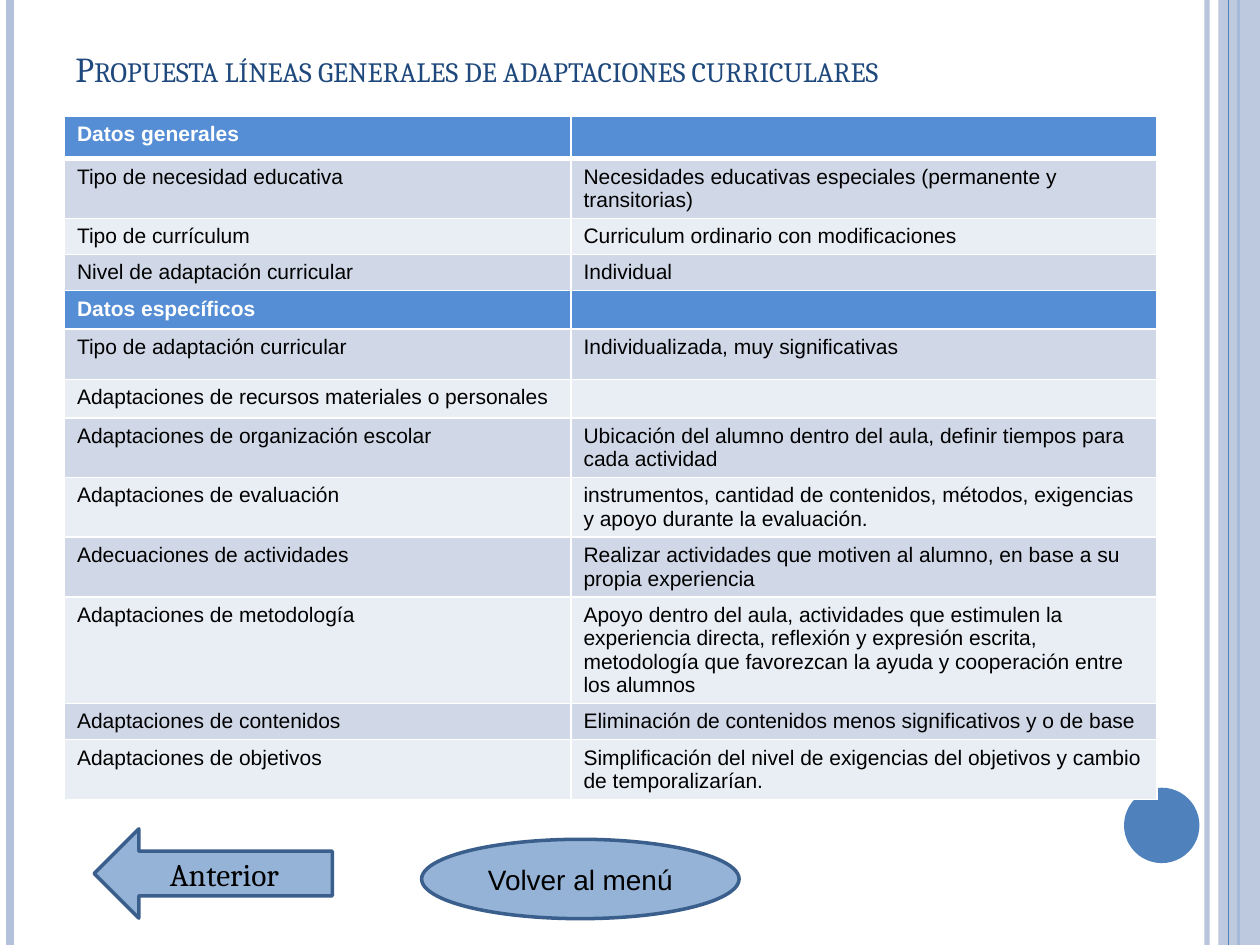
"""Build the slide with the general lines for curricular adaptations."""
from lxml import etree
from pptx import Presentation
from pptx import util as u
from pptx.dml.color import RGBColor
from pptx.enum import shapes, text
from pptx.oxml.ns import qn

WHITE = RGBColor(0xFF, 0xFF, 0xFF)
BLACK = RGBColor(0x00, 0x00, 0x00)
NAVY = RGBColor(0x1F, 0x49, 0x7D)
BLUE = RGBColor(0x4F, 0x81, 0xBD)
PALE = RGBColor(0xB3, 0xC1, 0xDB)
BUTTON = RGBColor(0x95, 0xB3, 0xD7)
EDGE = RGBColor(0x3A, 0x5F, 0x8C)
HEADER = RGBColor(0x55, 0x8E, 0xD5)
BANDS = (RGBColor(0xD0, 0xD8, 0xE8), RGBColor(0xE9, 0xED, 0xF4))

COLUMNS = (10.21, 11.81)
ROWS = (
    (0.86, "Datos generales", ""),
    (0.97, "Tipo de necesidad educativa",
     "Necesidades educativas especiales (permanente y transitorias)"),
    (0.69, "Tipo de currículum", "Curriculum ordinario con modificaciones"),
    (0.71, "Nivel de adaptación curricular", "Individual"),
    (0.53, "Datos específicos", ""),
    (1.02, "Tipo de adaptación curricular", "Individualizada, muy significativas"),
    (0.76, "Adaptaciones de recursos materiales o personales", ""),
    (1.17, "Adaptaciones de organización escolar",
     "Ubicación del alumno dentro del aula, definir tiempos para cada actividad"),
    (1.17, "Adaptaciones de evaluación",
     "instrumentos, cantidad de contenidos, métodos, exigencias y apoyo durante la evaluación."),
    (1.17, "Adecuaciones de actividades",
     "Realizar actividades que motiven al alumno, en base a su propia experiencia"),
    (2.01, "Adaptaciones de metodología",
     "Apoyo dentro del aula, actividades que estimulen la experiencia directa, reflexión y "
     "expresión escrita, metodología que favorezcan la ayuda y cooperación entre los alumnos"),
    (0.71, "Adaptaciones de contenidos",
     "Eliminación de contenidos menos significativos y o de base"),
    (1.17, "Adaptaciones de objetivos",
     "Simplificación del nivel de exigencias del objetivos y cambio de temporalizarían."),
)
HEADER_ROWS = (0, 4)


def write(tf, words, size=12, font="Arial", color=BLACK, bold=False, align=None, small=False):
    """Put formatted words in the first paragraph of a text frame."""
    p = tf.paragraphs[0]
    p.alignment = align
    if not words:
        etree.SubElement(p._p, qn("a:endParaRPr"), sz=str(size * 100))
        return
    r = p.add_run()
    r.text = words
    r.font.size, r.font.name, r.font.bold = u.Pt(size), font, bold
    r.font.color.rgb = color
    if small:
        r._r.get_or_add_rPr().set("cap", "small")


def set_alpha(sp, percent):
    """Make the first solid colour of a shape partly transparent."""
    color = next(sp._element.spPr.iter(qn("a:srgbClr")))
    etree.SubElement(color, qn("a:alpha"), val=str(percent * 1000))


def set_border(cell, side, width):
    """Draw one white border of a table cell."""
    ln = etree.SubElement(cell._tc.get_or_add_tcPr(), qn("a:ln" + side), w=str(u.Pt(width)))
    fill = etree.SubElement(ln, qn("a:solidFill"))
    etree.SubElement(fill, qn("a:srgbClr"), val=str(WHITE))


class Deck:
    """Hold the style and the current slide."""

    def __init__(self):
        self.prs = Presentation()
        self.prs.slide_width, self.prs.slide_height = u.Cm(25.4), u.Cm(19.05)
        self.s = self.prs.slides.add_slide(self.prs.slide_layouts[6])

    def stripe(self, x, color, width, alpha=None):
        """Add a full-height vertical line."""
        line = self.s.shapes.add_connector(
            shapes.MSO_CONNECTOR.STRAIGHT, u.Cm(x), 0, u.Cm(x), self.prs.slide_height)
        line.line.color.rgb, line.line.width = color, u.Pt(width)
        if alpha:
            set_alpha(line, alpha)
        etree.SubElement(line._element.spPr, qn("a:effectLst"))

    def shape(self, kind, box, fill, edge=None):
        """Add a preset shape."""
        sp = self.s.shapes.add_shape(kind, *map(u.Cm, box))
        sp.shadow.inherit = False
        sp.fill.solid()
        sp.fill.fore_color.rgb = fill
        if edge:
            sp.line.color.rgb, sp.line.width = edge, u.Pt(2)
        else:
            sp.line.fill.background()
        return sp

    def button(self, kind, box, words, **style):
        """Add an outlined shape with a centred label."""
        tf = self.shape(kind, box, BUTTON, EDGE).text_frame
        tf.word_wrap, tf.vertical_anchor = True, text.MSO_ANCHOR.MIDDLE
        write(tf, words, align=text.PP_ALIGN.CENTER, **style)

    def title(self, box, words):
        """Add the slide title."""
        tf = self.s.shapes.add_textbox(*map(u.Cm, box)).text_frame
        tf.word_wrap, tf.vertical_anchor = True, text.MSO_ANCHOR.BOTTOM
        write(tf, words, size=20, font="Cambria", color=NAVY, small=True)

    def table(self, left, top):
        """Add the table of adaptations."""
        height = sum(row[0] for row in ROWS)
        table = self.s.shapes.add_table(
            len(ROWS), len(COLUMNS), u.Cm(left), u.Cm(top),
            u.Cm(sum(COLUMNS)), u.Cm(height)).table
        for column, width in zip(table.columns, COLUMNS):
            column.width = u.Cm(width)
        for i, (row_height, *words) in enumerate(ROWS):
            table.rows[i].height = u.Cm(row_height)
            header = i in HEADER_ROWS
            for j, entry in enumerate(words):
                cell = table.cell(i, j)
                for side in "LRTB":
                    thick = (i, side) in ((0, "B"), (1, "T"))
                    set_border(cell, side, 3 if thick else 1)
                cell.fill.solid()
                cell.fill.fore_color.rgb = HEADER if header else BANDS[(i + 1) % 2]
                write(cell.text_frame, entry, color=WHITE if header else BLACK, bold=header)


def main():
    """Compose and save the slide."""
    kinds = shapes.MSO_SHAPE
    deck = Deck()
    deck.stripe(24.33, PALE, 3, alpha=93)
    deck.stripe(0.2, PALE, 4.5)
    deck.stripe(24.97, BLUE, 1.5)
    set_alpha(deck.shape(kinds.RECTANGLE, (24.56, 0, 0.84, 19.05), PALE), 87)
    deck.stripe(24.77, BLUE, 0.75)
    deck.shape(kinds.OVAL, (22.66, 15.88, 1.52, 1.52), BLUE)
    deck.button(kinds.OVAL, (8.5, 16.92, 6.4, 1.6), "Volver al menú", size=16)
    deck.button(kinds.LEFT_ARROW, (1.9, 16.71, 4.8, 1.8), "Anterior", size=18, font="Cambria")
    deck.table(1.3, 2.34)
    deck.title((1.27, 0.76, 23.04, 1.17),
               "Propuesta líneas generales de adaptaciones curriculares")
    deck.prs.save("out.pptx")


if __name__ == "__main__":
    main()
